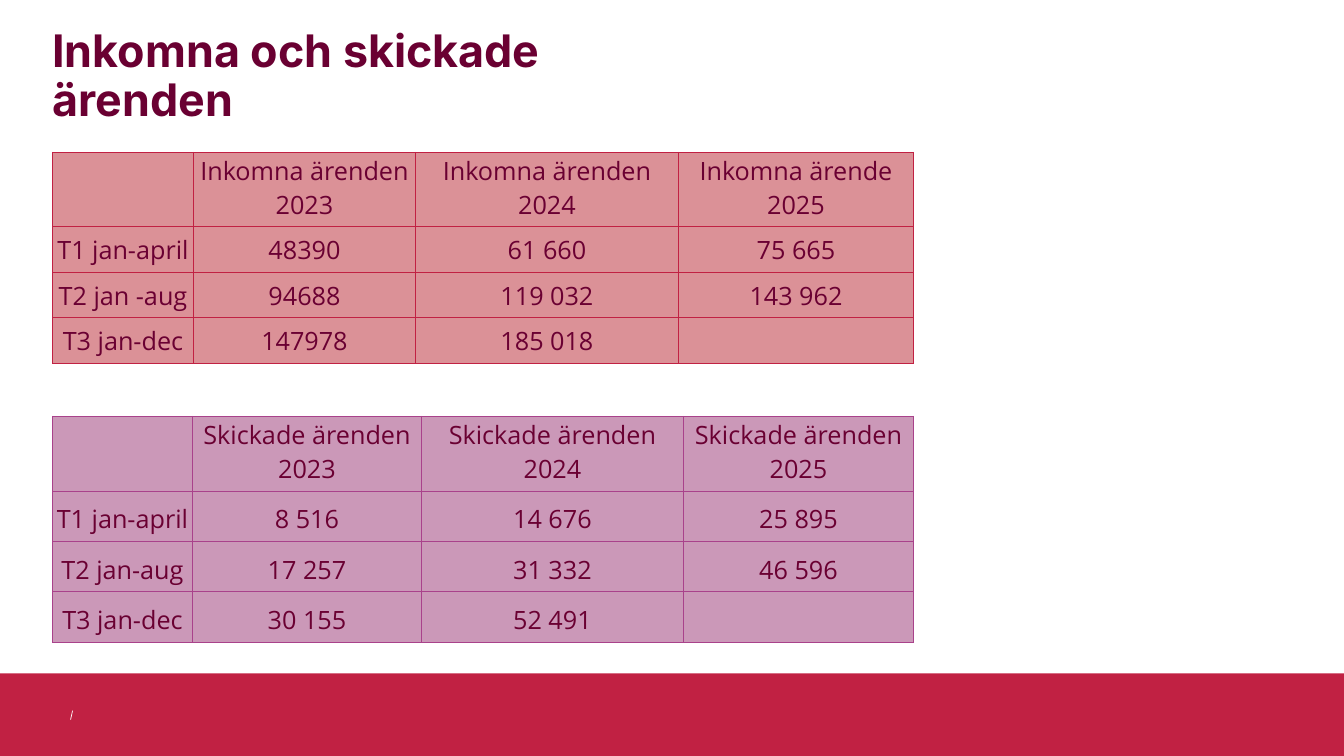
from dataclasses import dataclass

from lxml.etree import SubElement
from pptx import Presentation
from pptx.dml.color import RGBColor as Color
from pptx.enum.shapes import MSO_CONNECTOR as Connector, MSO_SHAPE as Shape
from pptx.enum.text import MSO_ANCHOR as Anchor, PP_ALIGN as Align
from pptx.oxml.ns import qn
from pptx.util import Inches, Pt


@dataclass(frozen=True)
class Theme:
    """Colours, fonts and type sizes of the slide."""
    plum: str = "6A0032"
    crimson: str = "C12143"
    rose: str = "DB9197"
    violet: str = "A9428B"
    mauve: str = "CB98B8"
    white: str = "FFFFFF"
    title_font: str = "Inter"
    body_font: str = "Open Sans"
    title_size: int = 32
    body_size: int = 18
    hairline: float = 0.5


class SlideBuilder:
    """Draws styled elements on one page."""

    def __init__(self, page, theme):
        """Keep the page and its theme."""
        self.page = page
        self.theme = theme

    def style(self, para, font, size, bold=False):
        """Format every run of a paragraph."""
        for span in para.runs:
            span.font.name = font
            span.font.size = Pt(size)
            span.font.bold = bold
            span.font.color.rgb = Color.from_string(self.theme.plum)

    def band(self, left, top, width, height, colour):
        """Draw a plain filled rectangle."""
        box = self.page.shapes.add_shape(
            Shape.RECTANGLE, Inches(left), Inches(top), Inches(width), Inches(height))
        box.shadow.inherit = False
        box.fill.solid()
        box.fill.fore_color.rgb = Color.from_string(colour)
        box.line.fill.background()

    def line(self, start, end, colour):
        """Draw a thin straight line."""
        stroke = self.page.shapes.add_connector(
            Connector.STRAIGHT, *(Inches(value) for value in (*start, *end)))
        stroke.line.color.rgb = Color.from_string(colour)
        stroke.line.width = Pt(self.theme.hairline)
        SubElement(stroke._element.spPr, qn("a:effectLst"))

    def title(self, text, left, top, width, height):
        """Write the slide title."""
        box = self.page.shapes.add_textbox(
            Inches(left), Inches(top), Inches(width), Inches(height))
        frame = box.text_frame
        frame.word_wrap = True
        frame.vertical_anchor = Anchor.MIDDLE
        frame.margin_left = frame.margin_right = 0
        frame.margin_top = frame.margin_bottom = 0
        frame.text = text
        para = frame.paragraphs[0]
        para.line_spacing = 0.9
        self.style(para, self.theme.title_font, self.theme.title_size, bold=True)

    def cell(self, cell, text, fill, border):
        """Fill, frame and write one table cell."""
        properties = cell._tc.get_or_add_tcPr()
        for side in ("lnL", "lnR", "lnT", "lnB"):
            edge = SubElement(properties, qn(f"a:{side}"), w=str(Pt(self.theme.hairline)))
            SubElement(SubElement(edge, qn("a:solidFill")), qn("a:srgbClr"), val=border)
        cell.fill.solid()
        cell.fill.fore_color.rgb = Color.from_string(fill)
        cell.margin_left = cell.margin_right = cell.margin_top = Inches(0.01)
        cell.margin_bottom = Inches(0.05)
        cell.vertical_anchor = Anchor.BOTTOM
        cell.text = text
        para = cell.text_frame.paragraphs[0]
        para.alignment = Align.CENTER
        self.style(para, self.theme.body_font, self.theme.body_size)

    def table(self, left, top, widths, heights, rows, fill, border):
        """Draw a table with one fill and one border colour."""
        frame = self.page.shapes.add_table(
            len(rows), len(widths), Inches(left), Inches(top),
            Inches(sum(widths)), Inches(sum(heights)))
        table = frame.table
        for column, width in zip(table.columns, widths):
            column.width = Inches(width)
        for row, height, texts in zip(table.rows, heights, rows):
            row.height = Inches(height)
            for cell, text in zip(row.cells, texts):
                self.cell(cell, text, fill, border)


def main():
    """Build the slide and save it."""
    deck = Presentation()
    deck.slide_width, deck.slide_height = Inches(13.33), Inches(7.5)
    theme = Theme()
    builder = SlideBuilder(deck.slides.add_slide(deck.slide_layouts[6]), theme)

    builder.band(0, 6.68, 13.33, 0.82, theme.crimson)
    builder.line((0.72, 7.05), (0.7, 7.14), theme.white)
    builder.title("Inkomna och skickade ärenden", 0.52, 0.33, 6.15, 0.88)

    received = [
        ("", "Inkomna ärenden 2023", "Inkomna ärenden 2024", "Inkomna ärende 2025"),
        ("T1 jan-april", "48390", "61 660", "75 665"),
        ("T2 jan -aug", "94688", "119 032", "143 962"),
        ("T3 jan-dec", "147978", "185 018", ""),
    ]
    sent = [
        ("", "Skickade ärenden 2023", "Skickade ärenden 2024", "Skickade ärenden 2025"),
        ("T1 jan-april", "8 516", "14 676", "25 895"),
        ("T2 jan-aug", "17 257", "31 332", "46 596"),
        ("T3 jan-dec", "30 155", "52 491", ""),
    ]
    builder.table(0.52, 1.51, (1.4, 2.2, 2.61, 2.33), (0.74, *[0.45] * 3),
                  received, theme.rose, theme.crimson)
    builder.table(0.52, 4.13, (1.39, 2.27, 2.6, 2.28), (0.74, *[0.5] * 3),
                  sent, theme.mauve, theme.violet)
    deck.save("out.pptx")


if __name__ == "__main__":
    main()
